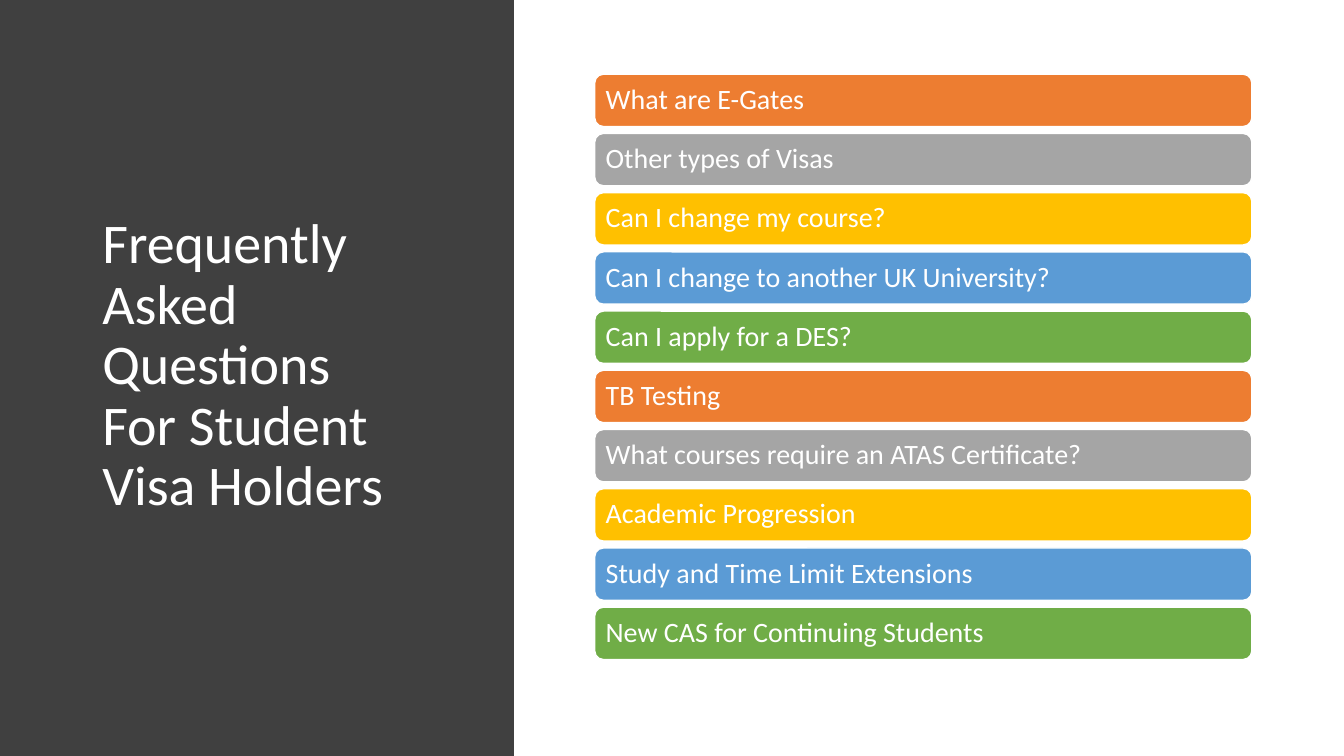
from dataclasses import dataclass

from pptx import Presentation
from pptx.dml.color import RGBColor
from pptx.enum.shapes import MSO_SHAPE
from pptx.enum.text import MSO_ANCHOR, PP_ALIGN
from pptx.slide import Slide
from pptx.text.text import TextFrame
from pptx.util import Pt

WHITE = RGBColor(0xFF, 0xFF, 0xFF)
CHARCOAL = RGBColor(0x40, 0x40, 0x40)
ORANGE = RGBColor(0xED, 0x7D, 0x31)
GREY = RGBColor(0xA5, 0xA5, 0xA5)
GOLD = RGBColor(0xFF, 0xC0, 0x00)
BLUE = RGBColor(0x5B, 0x9B, 0xD5)
GREEN = RGBColor(0x70, 0xAD, 0x47)

BAR_COLOURS = (ORANGE, GREY, GOLD, BLUE, GREEN)
BAR_LEFT, BAR_TOP, BAR_WIDTH, BAR_HEIGHT = 424.8, 53, 469.4, 37.4
BAR_PITCH = 42.3
BAR_INSET = 6

QUESTIONS = (
    "What are E-Gates",
    "Other types of Visas",
    "Can I change my course?",
    "Can I change to another UK University?",
    "Can I apply for a DES?",
    "TB Testing",
    "What courses require an ATAS Certificate?",
    "Academic Progression",
    "Study and Time Limit Extensions",
    "New CAS for Continuing Students",
)


@dataclass(frozen=True)
class QuestionBar:
    text: str
    top: float
    colour: RGBColor


def write_text(tf: TextFrame, text: str, size: float) -> None:
    tf.word_wrap = True
    tf.vertical_anchor = MSO_ANCHOR.MIDDLE
    p = tf.paragraphs[0]
    p.text = text
    p.alignment = PP_ALIGN.LEFT
    p.line_spacing = 0.9
    p.font.name = "Calibri"
    p.font.size = Pt(size)
    p.font.color.rgb = WHITE


def draw_panel(s: Slide) -> None:
    sp = s.shapes.add_shape(MSO_SHAPE.RECTANGLE, Pt(0), Pt(0), Pt(367.2), Pt(540))
    sp.shadow.inherit = False
    sp.fill.solid()
    sp.fill.fore_color.rgb = CHARCOAL
    sp.line.fill.background()


def draw_title(s: Slide) -> None:
    sp = s.shapes.add_textbox(Pt(66), Pt(49), Pt(264), Pt(426))
    write_text(sp.text_frame, "Frequently Asked Questions \vFor Student Visa Holders", 40)


def draw_bar(s: Slide, bar: QuestionBar) -> None:
    sp = s.shapes.add_shape(MSO_SHAPE.ROUNDED_RECTANGLE, Pt(BAR_LEFT), Pt(bar.top),
                            Pt(BAR_WIDTH), Pt(BAR_HEIGHT))
    sp.shadow.inherit = False
    sp.fill.solid()
    sp.fill.fore_color.rgb = bar.colour
    sp.line.color.rgb = WHITE
    sp.line.width = Pt(1)
    tf = sp.text_frame
    tf.margin_left = tf.margin_right = Pt(BAR_INSET)
    tf.margin_top = tf.margin_bottom = Pt(BAR_INSET)
    write_text(tf, bar.text, 20)


def main() -> None:
    prs = Presentation()
    prs.slide_width, prs.slide_height = Pt(960), Pt(540)
    s = prs.slides.add_slide(prs.slide_layouts[6])

    # Dark title panel
    draw_panel(s)
    draw_title(s)

    # Question bars, cycling through the five colours
    for i, question in enumerate(QUESTIONS):
        colour = BAR_COLOURS[i % len(BAR_COLOURS)]
        draw_bar(s, QuestionBar(question, BAR_TOP + i * BAR_PITCH, colour))

    prs.save("out.pptx")


if __name__ == "__main__":
    main()
